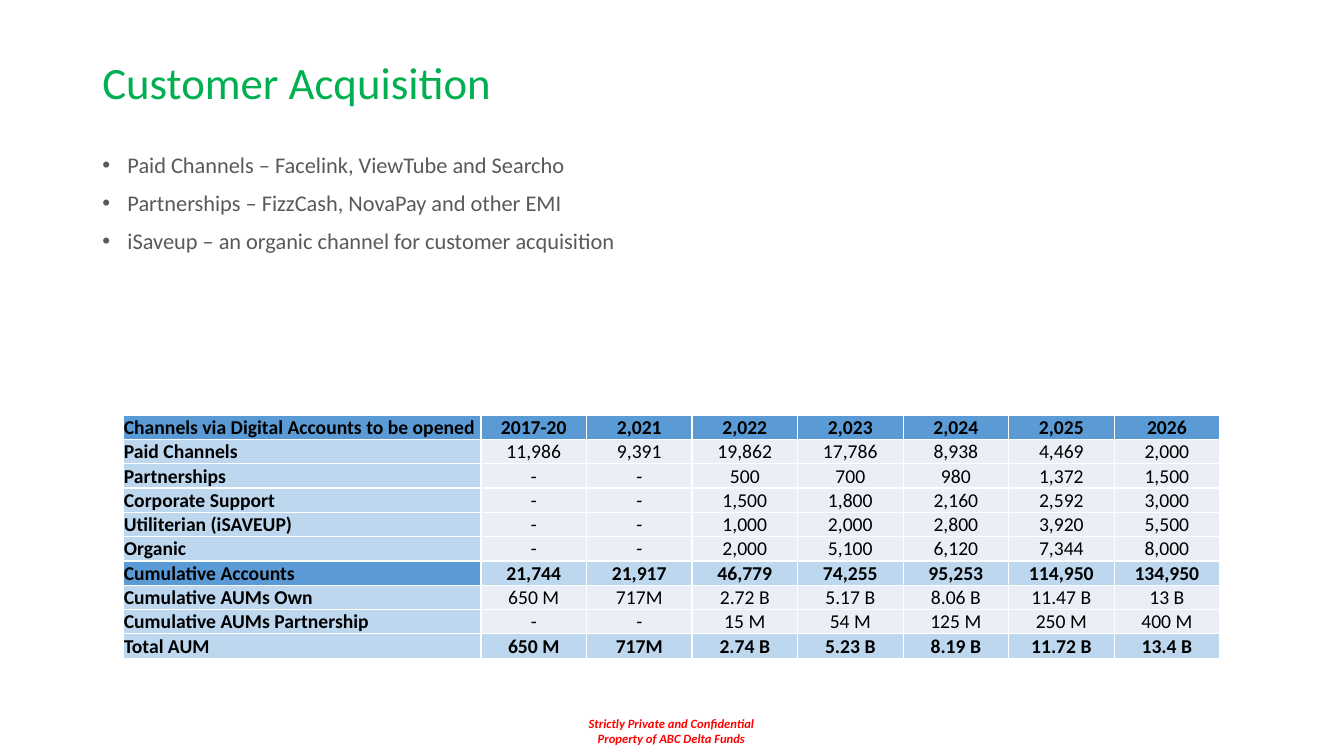
from lxml import etree
from pptx import Presentation
from pptx.dml.color import RGBColor
from pptx.enum.text import MSO_ANCHOR, PP_ALIGN
from pptx.oxml.ns import qn
from pptx.util import Pt

MID = MSO_ANCHOR.MIDDLE
LEFT, CENTER = PP_ALIGN.LEFT, PP_ALIGN.CENTER

GREEN = RGBColor(0x00, 0xB0, 0x50)
GRAY = RGBColor(0x59, 0x59, 0x59)
RED = RGBColor(0xFF, 0x00, 0x00)
BLACK = RGBColor(0x00, 0x00, 0x00)
WHITE = RGBColor(0xFF, 0xFF, 0xFF)
BLUE = RGBColor(0x5B, 0x9B, 0xD5)
SKY = RGBColor(0xBD, 0xD7, 0xEE)
PALE = RGBColor(0xEA, 0xEF, 0xF7)

FONT = "Calibri"
POINTS = [
    "Paid Channels – Facelink, ViewTube and Searcho",
    "Partnerships – FizzCash, NovaPay and other EMI",
    "iSaveup – an organic channel for customer acquisition",
]
NOTICE = ["Strictly Private and Confidential", "Property of ABC Delta Funds"]
ROWS = [
    ["Channels via Digital Accounts to be opened",
     "2017-20", "2,021", "2,022", "2,023", "2,024", "2,025", "2026"],
    ["Paid Channels",
     "11,986", "9,391", "19,862", "17,786", "8,938", "4,469", "2,000"],
    ["Partnerships", "-", "-", "500", "700", "980", "1,372", "1,500"],
    ["Corporate Support",
     "-", "-", "1,500", "1,800", "2,160", "2,592", "3,000"],
    ["Utiliterian (iSAVEUP)",
     "-", "-", "1,000", "2,000", "2,800", "3,920", "5,500"],
    ["Organic", "-", "-", "2,000", "5,100", "6,120", "7,344", "8,000"],
    ["Cumulative Accounts",
     "21,744", "21,917", "46,779", "74,255", "95,253", "114,950", "134,950"],
    ["Cumulative AUMs Own",
     "650 M", "717M", "2.72 B", "5.17 B", "8.06 B", "11.47 B", "13 B"],
    ["Cumulative AUMs Partnership",
     "-", "-", "15 M", "54 M", "125 M", "250 M", "400 M"],
    ["Total AUM",
     "650 M", "717M", "2.74 B", "5.23 B", "8.19 B", "11.72 B", "13.4 B"],
]
HEAD, COUNT, TOTAL = 0, 6, 9
LABEL = 255.6


def style(para, size, color, bold=False, italic=False):
    """Set the font of a whole paragraph."""
    font = para.font
    font.name, font.size = FONT, Pt(size)
    font.bold, font.italic = bold, italic
    font.color.rgb = color


def add_text(slide, box, lines, wrap=True):
    """Add a text box with one paragraph per line and return its frame."""
    frame = slide.shapes.add_textbox(*map(Pt, box)).text_frame
    frame.word_wrap = wrap
    frame.text = "\n".join(lines)
    return frame


def add_title(slide, box):
    """Add the slide title."""
    frame = add_text(slide, box, ["Customer Acquisition"])
    frame.vertical_anchor = MID
    para = frame.paragraphs[0]
    para.line_spacing = 0.9
    style(para, 32, GREEN)


def add_points(slide, box):
    """Add the bulleted list of channels."""
    frame = add_text(slide, box, POINTS)
    for i, para in enumerate(frame.paragraphs):
        para.line_spacing = 0.9
        para.space_before = Pt(10 if i else 0)
        props = para._p.get_or_add_pPr()
        props.set("marL", str(Pt(18)))
        props.set("indent", str(-Pt(18)))
        etree.SubElement(props, qn("a:buFont"), typeface="Arial")
        etree.SubElement(props, qn("a:buChar"), char="•")
        style(para, 16, GRAY)


def add_edges(cell):
    """Draw thin white borders round a cell."""
    props = cell._tc.get_or_add_tcPr()
    for side in ("a:lnL", "a:lnR", "a:lnT", "a:lnB"):
        line = etree.SubElement(props, qn(side), w=str(Pt(1)))
        fill = etree.SubElement(line, qn("a:solidFill"))
        etree.SubElement(fill, qn("a:srgbClr"), val=str(WHITE))


def cell_fill(row, col):
    """Pick the fill of a cell from its place in the table."""
    if row == HEAD or (row == COUNT and col == 0):
        return BLUE
    return SKY if col == 0 or row in (COUNT, TOTAL) else PALE


def add_grid(slide, box):
    """Add the table of accounts and assets by channel and year."""
    wide, high = len(ROWS[0]), len(ROWS)
    table = slide.shapes.add_table(high, wide, *map(Pt, box)).table
    table.first_row = table.horz_banding = False
    for i, column in enumerate(table.columns):
        column.width = Pt((box[2] - LABEL) / (wide - 1) if i else LABEL)
    for r, texts in enumerate(ROWS):
        table.rows[r].height = Pt(box[3] / high)
        for c, text in enumerate(texts):
            cell = table.cell(r, c)
            cell.margin_left = cell.margin_right = cell.margin_top = Pt(0.5)
            cell.margin_bottom = 0
            cell.vertical_anchor = MID
            add_edges(cell)
            cell.fill.solid()
            cell.fill.fore_color.rgb = cell_fill(r, c)
            cell.text = text
            para = cell.text_frame.paragraphs[0]
            para.alignment = CENTER if c else LEFT
            style(para, 14, BLACK, bold=c == 0 or r in (HEAD, COUNT, TOTAL))


def add_notice(slide, box):
    """Add the confidentiality notice at the foot."""
    for para in add_text(slide, box, NOTICE, wrap=False).paragraphs:
        para.alignment = CENTER
        style(para, 9, RED, bold=True, italic=True)


def main():
    """Build the slide and save it."""
    deck = Presentation()
    deck.slide_width, deck.slide_height = Pt(960), Pt(540)
    slide = deck.slides.add_slide(deck.slide_layouts[6])
    add_notice(slide, (412.5, 507.6, 134, 29))
    add_title(slide, (66, 28.8, 828, 64))
    add_points(slide, (66, 106.5, 828, 379.5))
    add_grid(slide, (88, 296.6, 783.4, 173.5))
    deck.save("out.pptx")


if __name__ == "__main__":
    main()
